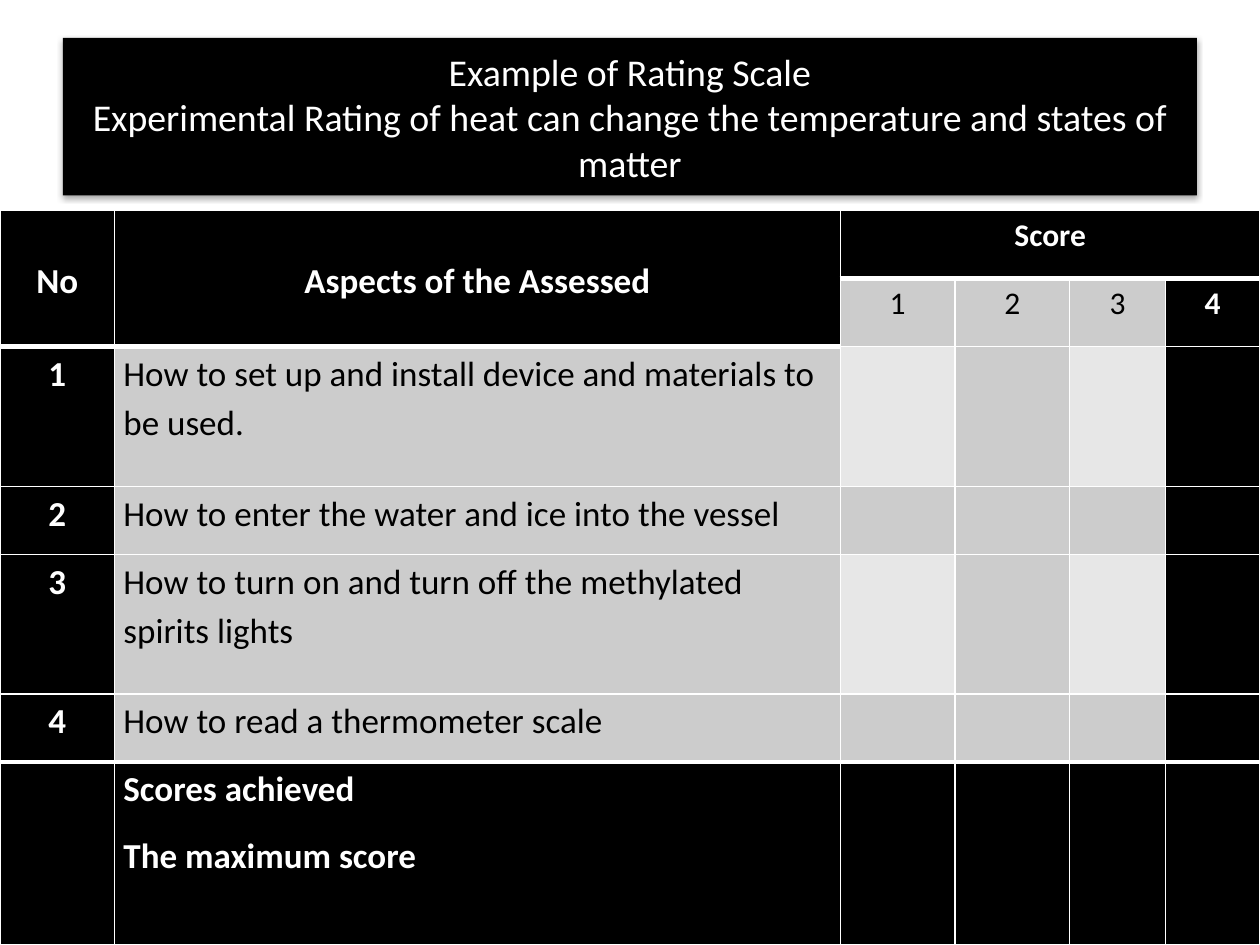
from dataclasses import dataclass

from pptx import Presentation
from pptx.dml.color import RGBColor
from pptx.enum.shapes import MSO_SHAPE as Shape
from pptx.enum.text import MSO_ANCHOR as Anchor, PP_ALIGN as Align
from pptx.oxml import parse_xml
from pptx.oxml.ns import nsdecls
from pptx.util import Inches, Pt


@dataclass(frozen=True)
class Theme:
    font: str = "Calibri"
    black: str = "000000"
    white: str = "FFFFFF"
    gray: str = "CCCCCC"
    light_gray: str = "E7E7E7"
    title_size: float = 21.6
    body_size: float = 20
    score_size: float = 18
    thin: float = 1
    thick: float = 3


COLUMN_WIDTHS = [0.91, 5.76, 0.91, 0.91, 0.76, 0.75]
ROW_HEIGHTS = [0.54, 0.54, 1.11, 0.54, 1.11, 0.54, 1.45]
SCORE_COLUMNS = range(2, 6)
LAST_COLUMN, FOOTER_ROW = 5, 6
# Row number -> columns that have a thick rule above that row
THICK_ABOVE = {1: SCORE_COLUMNS, 2: range(2), FOOTER_ROW: range(6)}

ASPECTS = [
    "How to set up and install device and materials to be used.",
    "How to enter the water and ice into the vessel",
    "How to turn on and turn off the methylated spirits lights",
    "How to read a thermometer scale",
]


class SlideBuilder:
    def __init__(self, slide, theme):
        self.slide = slide
        self.theme = theme

    def style(self, paragraph, size, color, bold=False, align=Align.LEFT):
        paragraph.alignment = align
        font = paragraph.font
        font.name, font.size, font.bold = self.theme.font, Pt(size), bold
        font.color.rgb = RGBColor.from_string(color)

    def title(self, text, left, top, width, height):
        theme = self.theme
        shape = self.slide.shapes.add_shape(
            Shape.RECTANGLE, Inches(left), Inches(top), Inches(width), Inches(height))
        shape.fill.solid()
        shape.fill.fore_color.rgb = RGBColor.from_string(theme.black)
        shape.line.fill.background()
        self.add_shadow(shape)
        frame = shape.text_frame
        frame.word_wrap = True
        frame.vertical_anchor = Anchor.MIDDLE
        frame.text = text
        self.style(frame.paragraphs[0], theme.title_size, theme.white, align=Align.CENTER)

    def add_shadow(self, shape):
        shape._element.spPr.append(parse_xml(
            f'<a:effectLst {nsdecls("a")}><a:outerShdw blurRad="{Pt(3.1)}" '
            f'dist="{Pt(1.8)}" dir="5400000" rotWithShape="0">'
            f'<a:srgbClr val="{self.theme.black}"><a:alpha val="35000"/></a:srgbClr>'
            '</a:outerShdw></a:effectLst>'))

    def table(self, left, top):
        """Add the empty grid, with fills and rules in place."""
        frame = self.slide.shapes.add_table(
            len(ROW_HEIGHTS), len(COLUMN_WIDTHS), Inches(left), Inches(top),
            Inches(sum(COLUMN_WIDTHS)), Inches(sum(ROW_HEIGHTS)))
        table = frame.table
        table.first_row = table.horz_banding = False
        for column, width in zip(table.columns, COLUMN_WIDTHS):
            column.width = Inches(width)
        for row, height in zip(table.rows, ROW_HEIGHTS):
            row.height = Inches(height)
        for column in range(2):
            table.cell(0, column).merge(table.cell(1, column))
        table.cell(0, SCORE_COLUMNS[0]).merge(table.cell(0, LAST_COLUMN))
        for row in range(len(ROW_HEIGHTS)):
            for column in range(len(COLUMN_WIDTHS)):
                cell = table.cell(row, column)
                cell.margin_left = cell.margin_right = Inches(0.07)
                cell.margin_top = cell.margin_bottom = 0
                cell.fill.solid()
                cell.fill.fore_color.rgb = RGBColor.from_string(self.cell_color(row, column))
                self.add_borders(cell, row, column)
        return table

    def cell_color(self, row, column):
        theme = self.theme
        if row in (0, FOOTER_ROW) or column in (0, LAST_COLUMN) or (row, column) == (1, 1):
            return theme.black
        if row in (2, 4) and column in (2, 4):
            return theme.light_gray
        return theme.gray

    def add_borders(self, cell, row, column):
        theme = self.theme
        below = row + (cell.span_height if cell.is_merge_origin else 1)

        def rule(boundary):
            return theme.thick if column in THICK_ABOVE.get(boundary, ()) else theme.thin

        widths = {"L": theme.thin, "R": theme.thin, "T": rule(row), "B": rule(below)}
        properties = cell._tc.get_or_add_tcPr()
        for index, (side, width) in enumerate(widths.items()):
            properties.insert(index, parse_xml(
                f'<a:ln{side} {nsdecls("a")} w="{Pt(width)}"><a:solidFill>'
                f'<a:srgbClr val="{theme.white}"/></a:solidFill></a:ln{side}>'))

    def cell_text(self, cell, text, size, color, bold=True, align=Align.CENTER,
                  anchor=Anchor.TOP):
        cell.vertical_anchor = anchor
        cell.text_frame.text = text
        for paragraph in cell.text_frame.paragraphs:
            self.style(paragraph, size, color, bold, align)
            paragraph.line_spacing = 1.15
            paragraph.space_after = Pt(10)


def main():
    presentation = Presentation()
    presentation.slide_width, presentation.slide_height = Inches(10), Inches(7.5)
    theme = Theme()
    builder = SlideBuilder(
        presentation.slides.add_slide(presentation.slide_layouts[6]), theme)

    builder.title("Example of Rating Scale\vExperimental Rating of heat can change "
                  "the temperature and states of matter", 0.5, 0.3, 9, 1.25)

    table = builder.table(0, 1.67)
    for column, heading in enumerate(["No", "Aspects of the Assessed"]):
        builder.cell_text(table.cell(0, column), heading, theme.body_size, theme.white,
                          anchor=Anchor.MIDDLE)
    builder.cell_text(table.cell(0, 2), "Score", theme.score_size, theme.white)
    for score, column in enumerate(SCORE_COLUMNS, start=1):
        is_last = column == LAST_COLUMN
        builder.cell_text(table.cell(1, column), str(score), theme.score_size,
                          theme.white if is_last else theme.black, bold=is_last)
    for number, aspect in enumerate(ASPECTS, start=1):
        row = number + 1
        builder.cell_text(table.cell(row, 0), str(number), theme.body_size, theme.white)
        builder.cell_text(table.cell(row, 1), aspect, theme.body_size, theme.black,
                          bold=False, align=Align.LEFT)
    builder.cell_text(table.cell(FOOTER_ROW, 1), "Scores achieved\nThe maximum score",
                      theme.body_size, theme.white, align=Align.LEFT)

    presentation.save("out.pptx")


if __name__ == "__main__":
    main()
